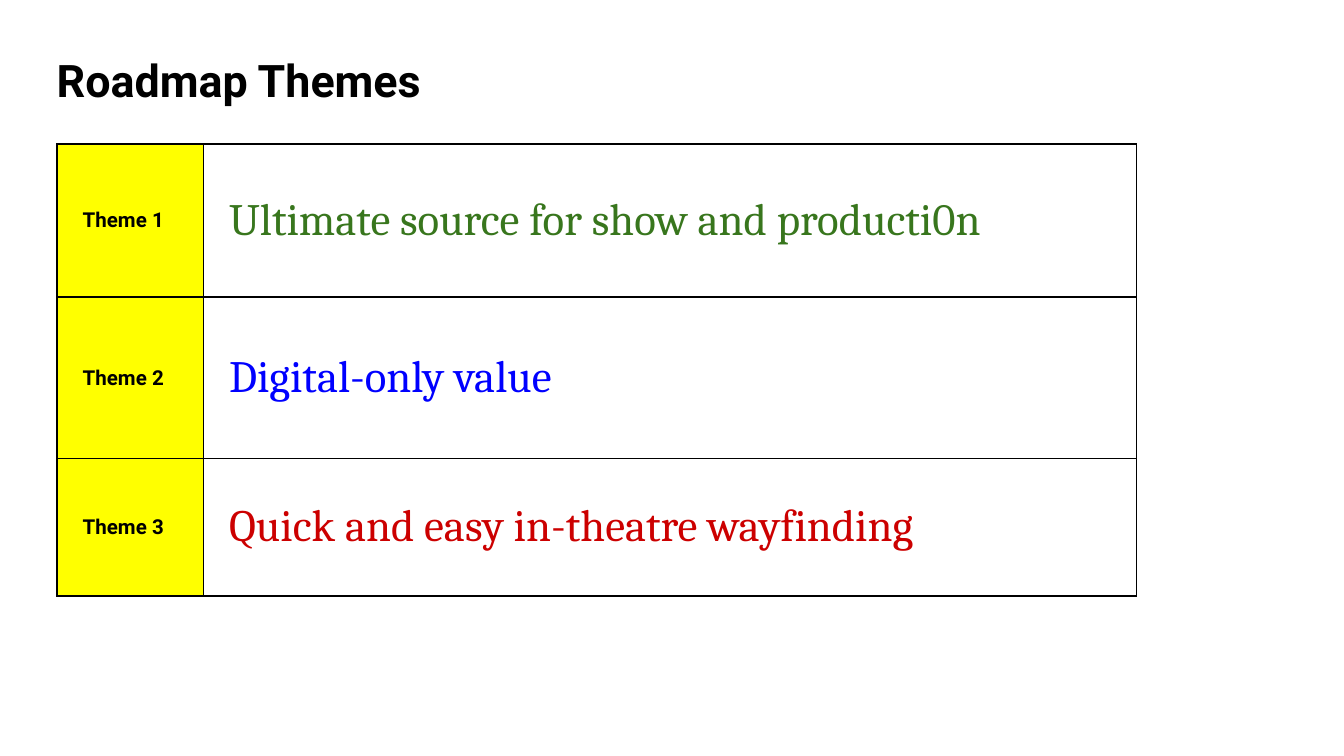
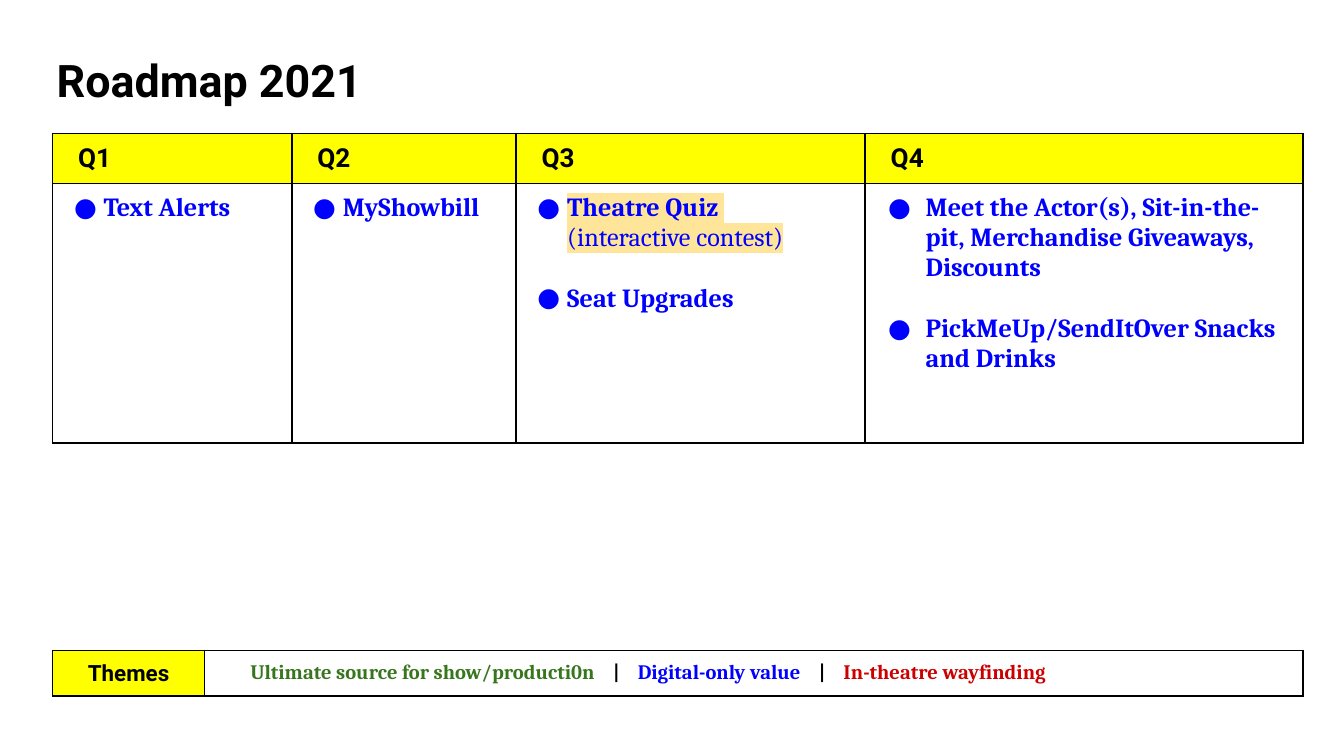
import copy
import dataclasses

import pptx
import pptx.dml.color
import pptx.enum.text
import pptx.oxml
import pptx.oxml.ns
import pptx.util

SLIDE_W = pptx.util.Inches(10)
SLIDE_H = SLIDE_W * 9 // 16
CELL_INSET = pptx.util.Inches(0.07)
TITLE_INSET = pptx.util.Inches(0.1)
LABEL_INDENT = 0.12

BLACK, WHITE, YELLOW = "000000", "FFFFFF", "FFFF00"
GREEN, BLUE, RED, SAND = "38761D", "0000FF", "CC0000", "FFE599"

MIDDLE = pptx.enum.text.MSO_ANCHOR.MIDDLE
CENTER = pptx.enum.text.PP_ALIGN.CENTER
TOP = pptx.enum.text.MSO_ANCHOR.TOP

# Boxes: left, top, width, height in percent of the slide
TITLE_BOX = (3.24, 5.16, 93, 10.32)
THEMES_BOX = (4.25, 19.04, 80.3, 59.79)
QUARTERS_BOX = (3.92, 17.64, 93.04, 40.9)
FOOTER_BOX = (3.92, 86.04, 93.04, 5.96)


@dataclasses.dataclass
class Style:
    size: float
    font: str = "Roboto"
    color: str = BLACK
    bold: bool = True


TITLE = Style(24)
THEME_LABEL = Style(11)
QUARTER_LABEL = Style(14)
FOOTER_LABEL = Style(12)
FEATURE = Style(14, "Cambria", BLUE)
FEATURE_NOTE = dataclasses.replace(FEATURE, bold=False)


def rgb(color):
    return pptx.dml.color.RGBColor.from_string(color)


def xml(markup):
    """Parse one element of the DrawingML namespace."""
    namespace = pptx.oxml.ns.nsdecls("a")
    tag_end = min(i for i in (markup.find(" "), markup.find("/"), markup.find(">")) if i > 0)
    return pptx.oxml.parse_xml(f"{markup[:tag_end]} {namespace}{markup[tag_end:]}")


def place(box):
    left, top, width, height = box
    return (round(SLIDE_W * left / 100), round(SLIDE_H * top / 100),
            round(SLIDE_W * width / 100), round(SLIDE_H * height / 100))


def format_run(run, style):
    run.font.size = pptx.util.Pt(style.size)
    run.font.name = style.font
    run.font.bold = style.bold
    run.font.color.rgb = rgb(style.color)


def highlight(run, color):
    latin = run.font._element.find(pptx.oxml.ns.qn("a:latin"))
    latin.addprevious(xml(f'<a:highlight><a:srgbClr val="{color}"/></a:highlight>'))


def indent(paragraph, left, first=0):
    properties = paragraph._p.get_or_add_pPr()
    properties.set("marL", str(pptx.util.Inches(left)))
    properties.set("indent", str(pptx.util.Inches(first)))
    return properties


def add_title(slide, text):
    frame = slide.shapes.add_textbox(*place(TITLE_BOX)).text_frame
    frame.word_wrap = True
    frame.margin_left = frame.margin_right = TITLE_INSET
    frame.margin_top = frame.margin_bottom = TITLE_INSET
    frame.text = text
    format_run(frame.paragraphs[0].runs[0], TITLE)


def add_grid(slide, box, columns, rows):
    """Add a plain table whose columns and rows share the box by weight."""
    left, top, width, height = place(box)
    table = slide.shapes.add_table(len(rows), len(columns), left, top, width, height).table
    table.first_row = table.horz_banding = False
    for column, weight in zip(table.columns, columns):
        column.width = round(width * weight / sum(columns))
    for row, weight in zip(table.rows, rows):
        row.height = round(height * weight / sum(rows))
    return table


def dress_cell(cell, fill=None, anchor=TOP):
    cell.margin_left = cell.margin_right = CELL_INSET
    cell.margin_top = cell.margin_bottom = CELL_INSET
    cell.vertical_anchor = anchor
    if fill:
        cell.fill.solid()
        cell.fill.fore_color.rgb = rgb(fill)
    else:
        cell.fill.background()
    properties = cell._tc.get_or_add_tcPr()
    for position, side in enumerate("LRTB"):
        properties.insert(position, xml(
            f'<a:ln{side} w="{pptx.util.Pt(1)}"><a:solidFill><a:srgbClr val="{BLACK}"/>'
            f'</a:solidFill></a:ln{side}>'))


def fill_label(cell, text, style, fill, anchor=TOP):
    dress_cell(cell, fill, anchor)
    paragraph = cell.text_frame.paragraphs[0]
    paragraph.text = text
    indent(paragraph, LABEL_INDENT)
    format_run(paragraph.runs[0], style)


def fill_features(cell, features, left, hanging):
    """Write bullets; a second line of a feature is a highlighted note."""
    dress_cell(cell)
    frame = cell.text_frame
    frame.text = "\n".join(features)
    for number, paragraph in enumerate(frame.paragraphs):
        properties = indent(paragraph, left, -hanging)
        properties.append(xml(f'<a:buClr><a:srgbClr val="{BLUE}"/></a:buClr>'))
        properties.append(xml(f'<a:buFont typeface="{FEATURE.font}"/>'))
        properties.append(xml('<a:buChar char="●"/>'))
        if number:
            paragraph.space_before = pptx.util.Pt(16.4)
        for run, style in zip(paragraph.runs, (FEATURE, FEATURE_NOTE)):
            format_run(run, style)
            if len(paragraph.runs) > 1:
                highlight(run, SAND)
        for line_break in paragraph._p.findall(pptx.oxml.ns.qn("a:br")):
            line_break.append(copy.deepcopy(paragraph.runs[0].font._element))


def add_themes_table(slide):
    themes = [("Ultimate source for show and producti0n", GREEN),
              ("Digital-only value", BLUE),
              ("Quick and easy in-theatre wayfinding", RED)]
    table = add_grid(slide, THEMES_BOX, [1.09, 6.94], [1.14, 1.2, 1.02])
    for row, (theme, color) in enumerate(themes):
        fill_label(table.cell(row, 0), f"Theme {row + 1}", THEME_LABEL, YELLOW, MIDDLE)
        fill_label(table.cell(row, 1), theme, Style(24, "Cambria", color, False), WHITE, MIDDLE)


def add_quarters_table(slide):
    narrow, wide = (0.31, 0.22), (0.38, 0.28)
    quarters = [
        (["Text Alerts"], narrow),
        (["MyShowbill"], narrow),
        (["Theatre Quiz \v(interactive contest)", "Seat Upgrades"], narrow),
        (["Meet the Actor(s), Sit-in-the-pit, Merchandise Giveaways, Discounts",
          "PickMeUp/SendItOver Snacks and Drinks"], wide),
    ]
    table = add_grid(slide, QUARTERS_BOX, [1.78, 1.67, 2.6, 3.26], [0.37, 1.93])
    for column, (features, bullet_indent) in enumerate(quarters):
        fill_label(table.cell(0, column), f"Q{column + 1}", QUARTER_LABEL, YELLOW)
        fill_features(table.cell(1, column), features, *bullet_indent)


def add_themes_footer(slide):
    gap, bar = (" ", BLACK), ("|", BLACK)
    parts = [("Ultimate source for show/producti0n", GREEN), gap, bar, gap,
             ("Digital-only value", BLUE), gap, bar, gap,
             ("In-theatre wayfinding", RED)]
    label, themes = add_grid(slide, FOOTER_BOX, [1.13, 8.17], [1]).rows[0].cells

    fill_label(label, "Themes", FOOTER_LABEL, YELLOW, MIDDLE)
    indent(label.text_frame.paragraphs[0], 0)
    label.text_frame.paragraphs[0].alignment = CENTER

    dress_cell(themes, WHITE, MIDDLE)
    paragraph = themes.text_frame.paragraphs[0]
    indent(paragraph, 0.27)
    for part in parts:
        text, color = part
        run = paragraph.add_run()
        run.text = text
        format_run(run, Style(11, "Cambria", color))
        if part == gap:
            run.font._element.set("spc", "720")


def add_slide(deck, title, *regions):
    slide = deck.slides.add_slide(deck.slide_layouts[6])
    slide.background.fill.solid()
    slide.background.fill.fore_color.rgb = rgb(WHITE)
    add_title(slide, title)
    for add_region in regions:
        add_region(slide)


def main():
    deck = pptx.Presentation()
    deck.slide_width, deck.slide_height = SLIDE_W, SLIDE_H
    add_slide(deck, "Roadmap Themes", add_themes_table)
    add_slide(deck, "Roadmap 2021", add_quarters_table, add_themes_footer)
    deck.save("out.pptx")


if __name__ == "__main__":
    main()
